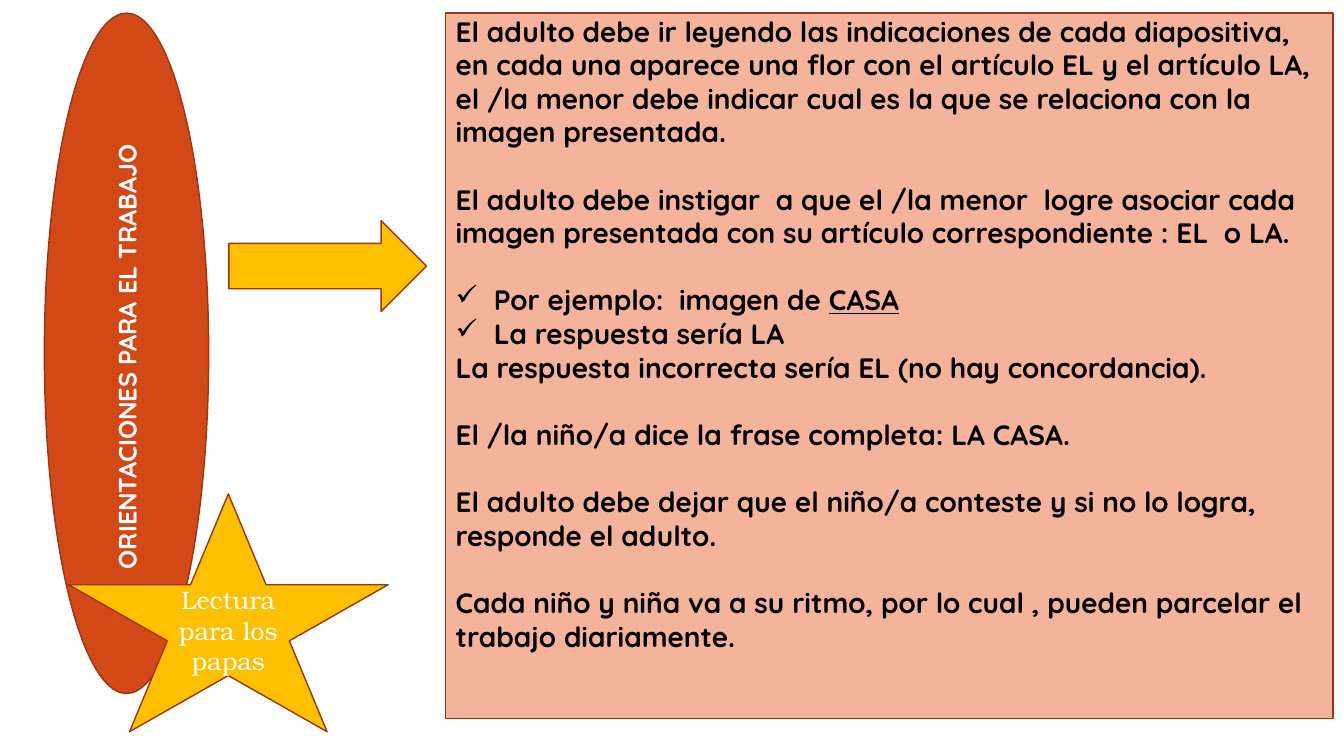
"""Builds the slide of work guidelines for parents reading with a child."""
from dataclasses import dataclass

from lxml.etree import SubElement
from pptx import Presentation
from pptx.dml.color import RGBColor
from pptx.enum.shapes import MSO_SHAPE
from pptx.enum.text import MSO_ANCHOR, PP_ALIGN
from pptx.oxml.ns import qn
from pptx.util import Inches, Pt

TITLE = "ORIENTACIONES PARA EL TRABAJO "
READERS = "Lectura para los papas"
GUIDELINES = [
    ["El adulto debe ir leyendo las indicaciones de cada diapositiva, en cada una aparece "
     "una flor con el artículo EL y el artículo LA, el /la menor debe indicar cual es la "
     "que se relaciona con la imagen presentada."],
    ["El adulto debe instigar  a que el /la menor  logre asociar cada imagen presentada "
     "con su artículo correspondiente : EL  o LA."],
    ["✓Por ejemplo:  imagen de _CASA", "✓La respuesta sería LA",
     "La respuesta incorrecta sería EL (no hay concordancia)."],
    ["El /la niño/a dice la frase completa: LA CASA."],
    ["El adulto debe dejar que el niño/a conteste y si no lo logra, responde el adulto."],
    ["Cada niño y niña va a su ritmo, por lo cual , pueden parcelar el trabajo diariamente."],
]


@dataclass(frozen=True)
class Theme:
    orange: str = "D34817"
    outline: str = "9C3511"
    gold: str = "FFC000"
    salmon: str = "F4B39B"
    light: str = "FFFFFF"
    dark: str = "000000"
    sans: str = "Quicksand"
    serif: str = "TeX Gyre Bonum"
    label: int = 18
    body: int = 20
    pitch: int = 24


THEME = Theme()


def add_block(s, kind, box, fill):
    sp = s.shapes.add_shape(kind, *map(Inches, box))
    sp.shadow.inherit = False
    sp.fill.solid()
    sp.fill.fore_color.rgb = RGBColor.from_string(fill)
    sp.line.color.rgb = RGBColor.from_string(THEME.outline)
    sp.line.width = Pt(1)
    sp.text_frame.word_wrap = True
    sp.text_frame.vertical_anchor = MSO_ANCHOR.MIDDLE
    return sp


def add_run(p, text, font, size, color, bold):
    r = p.add_run()
    r.text = text
    r.font.name = font
    r.font.size = Pt(size)
    r.font.color.rgb = RGBColor.from_string(color)
    r.font.bold = bold
    return r


def add_label(sp, text, font, bold):
    p = sp.text_frame.paragraphs[0]
    p.alignment = PP_ALIGN.CENTER
    add_run(p, text, font, THEME.label, THEME.light, bold)


def add_check(p):
    pPr = p._p.get_or_add_pPr()
    pPr.set("marL", str(Inches(0.38)))
    pPr.set("indent", str(-Inches(0.38)))
    SubElement(pPr, qn("a:buChar")).set("char", "✓")


def fill_guidelines(tf):
    tf.vertical_anchor = MSO_ANCHOR.TOP
    tf.margin_top = Inches(0.01)
    lines = [(g, i, line) for g, group in enumerate(GUIDELINES) for i, line in enumerate(group)]
    for n, (g, i, line) in enumerate(lines):
        p = tf.add_paragraph() if n else tf.paragraphs[0]
        p.alignment = PP_ALIGN.LEFT
        p.line_spacing = Pt(THEME.pitch)
        if g and i == 0:
            p.space_before = Pt(THEME.pitch)
        if line.startswith("✓"):
            add_check(p)
        plain, _, underlined = line.removeprefix("✓").partition("_")
        add_run(p, plain, THEME.sans, THEME.body, THEME.dark, True)
        if underlined:
            r = add_run(p, underlined, THEME.sans, THEME.body, THEME.dark, True)
            r.font.underline = True


def main():
    prs = Presentation()
    prs.slide_width, prs.slide_height = Inches(13.33), Inches(7.5)
    s = prs.slides.add_slide(prs.slide_layouts[6])

    title = add_block(s, MSO_SHAPE.OVAL, (-2.12, 2.69, 6.75, 1.63), THEME.orange)
    title.rotation = 270
    add_label(title, TITLE, THEME.sans, True)

    add_block(s, MSO_SHAPE.RIGHT_ARROW, (2.27, 2.19, 1.96, 0.9), THEME.gold)

    panel = add_block(s, MSO_SHAPE.RECTANGLE, (4.42, 0.13, 8.8, 7), THEME.salmon)
    fill_guidelines(panel.text_frame)

    star = add_block(s, MSO_SHAPE.STAR_5_POINT, (0.68, 4.9, 3.17, 2.36), THEME.gold)
    add_label(star, READERS, THEME.serif, False)

    prs.save("out.pptx")


if __name__ == "__main__":
    main()
